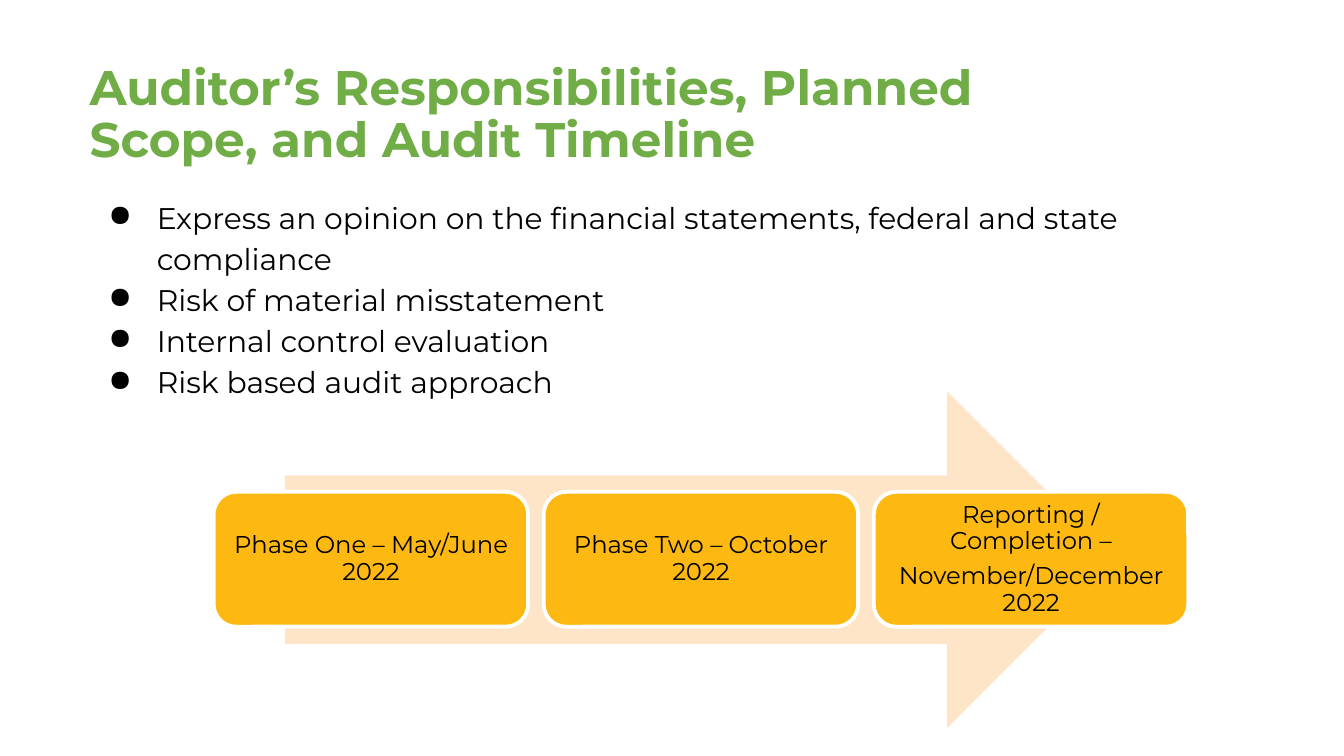
from dataclasses import dataclass

from lxml.etree import SubElement
from pptx import Presentation
from pptx.dml.color import RGBColor
from pptx.enum.shapes import MSO_SHAPE as Shape
from pptx.enum.text import MSO_ANCHOR as Anchor, PP_ALIGN as Align
from pptx.oxml.ns import qn
from pptx.util import Pt


@dataclass(frozen=True)
class Theme:
    font: str = "Montserrat"
    green: RGBColor = RGBColor(0x70, 0xAD, 0x47)
    black: RGBColor = RGBColor(0, 0, 0)
    white: RGBColor = RGBColor(255, 255, 255)
    peach: RGBColor = RGBColor(0xFE, 0xE5, 0xC8)
    amber: RGBColor = RGBColor(0xFD, 0xB9, 0x11)
    title_size: int = 26
    body_size: int = 16
    phase_size: int = 13


def apply(target, values):
    for name, value in values.items():
        setattr(target, name, value)


class SlideBuilder:
    def __init__(self, slide, theme):
        self.slide = slide
        self.theme = theme

    def fill_frame(self, frame, lines, font, paragraph_format, inset=0):
        margins = ("margin_left", "margin_top", "margin_right", "margin_bottom")
        apply(frame, {"word_wrap": True, **dict.fromkeys(margins, Pt(inset))})
        for index, line in enumerate(lines):
            paragraph = frame.paragraphs[0] if index == 0 else frame.add_paragraph()
            apply(paragraph, paragraph_format)
            run = paragraph.add_run()
            run.text = line
            apply(run.font, {"name": self.theme.font, "size": Pt(font["size"]),
                             "bold": font.get("bold", False)})
            run.font.color.rgb = font.get("color", self.theme.black)
        return frame.paragraphs

    def text(self, box, lines, font, line_spacing):
        shape = self.slide.shapes.add_textbox(*map(Pt, box))
        return self.fill_frame(shape.text_frame, lines, font,
                               {"line_spacing": line_spacing, "alignment": Align.LEFT})

    def title(self, box, line):
        font = {"size": self.theme.title_size, "color": self.theme.green, "bold": True}
        self.text(box, [line], font, 0.9)

    def bullets(self, box, lines):
        for paragraph in self.text(box, lines, {"size": self.theme.body_size}, 1.15):
            properties = paragraph._p.get_or_add_pPr()
            properties.set("marL", str(Pt(36)))
            properties.set("indent", str(Pt(-26)))
            color = SubElement(properties, qn("a:buClr"))
            SubElement(color, qn("a:srgbClr"), val=str(self.theme.black))
            SubElement(properties, qn("a:buChar"), char="●")

    def filled(self, kind, box, color, adjustments):
        shape = self.slide.shapes.add_shape(kind, *map(Pt, box))
        shape.shadow.inherit = False
        shape.fill.solid()
        shape.fill.fore_color.rgb = color
        shape.line.fill.background()
        for index, value in enumerate(adjustments):
            shape.adjustments[index] = value
        return shape

    def arrow(self, box):
        self.filled(Shape.RIGHT_ARROW, box, self.theme.peach, (0.5, 0.5))

    def phase(self, box, lines):
        shape = self.filled(Shape.ROUNDED_RECTANGLE, box, self.theme.amber, (0.167,))
        shape.line.color.rgb = self.theme.white
        shape.line.width = Pt(2)
        frame = shape.text_frame
        frame.vertical_anchor = Anchor.MIDDLE
        paragraphs = self.fill_frame(frame, lines, {"size": self.theme.phase_size},
                                     {"line_spacing": 0.9, "alignment": Align.CENTER}, 4.1)
        for paragraph in paragraphs[1:]:
            paragraph.space_before = Pt(5)


def main():
    presentation = Presentation()
    apply(presentation, {"slide_width": Pt(720), "slide_height": Pt(405)})
    slide = presentation.slides.add_slide(presentation.slide_layouts[6])
    builder = SlideBuilder(slide, Theme())

    builder.title((48, 34, 552, 57),
                  "Auditor’s Responsibilities, Planned Scope, and Audit Timeline")
    builder.bullets((48, 104, 588, 137.5), [
        "Express an opinion on the financial statements, federal and state compliance",
        "Risk of material misstatement",
        "Internal control evaluation",
        "Risk based audit approach",
    ])
    builder.arrow((152.6, 209.5, 445, 180.7))

    phases = [
        ["Phase One – May/June 2022"],
        ["Phase Two – October 2022"],
        ["Reporting / Completion –", "November/December 2022"],
    ]
    left, width, gap = 114.5, 168.4, 8.4
    for index, lines in enumerate(phases):
        builder.phase((left + index * (width + gap), 263.5, width, 72.2), lines)

    presentation.save("out.pptx")


if __name__ == "__main__":
    main()
